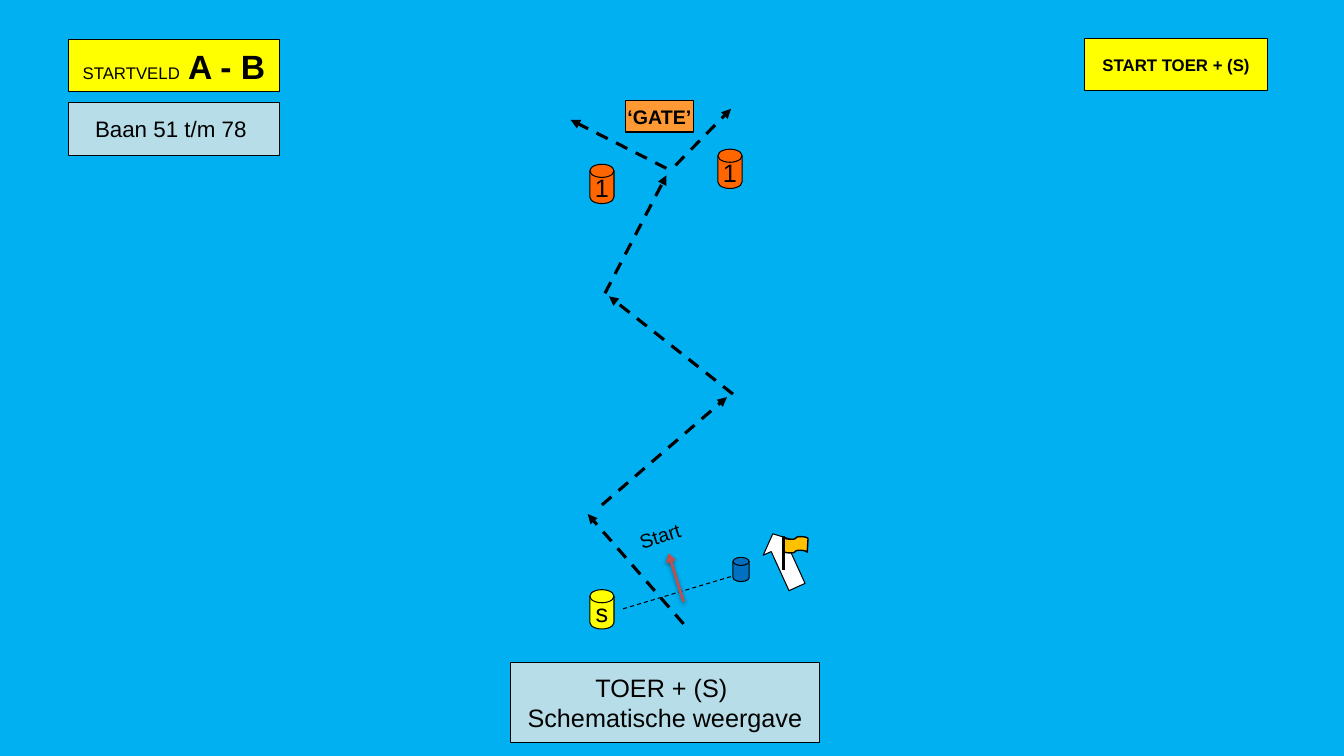
from dataclasses import dataclass
from itertools import chain

from lxml import etree
from pptx import Presentation
from pptx import util as u
from pptx.dml.color import RGBColor
from pptx.enum import dml, shapes, text
from pptx.oxml import parse_xml
from pptx.oxml.ns import nsdecls, qn
from pptx.shapes.base import BaseShape
from pptx.shapes.connector import Connector
from pptx.slide import Slide

EMU_PER_PX = 9144  # 100 px to the inch
FONT = "Arial"
BLACK, WHITE, YELLOW = "000000", "FFFFFF", "FFFF00"
ORANGE, PALE_BLUE = "FF6600", "B7DEE8"
KIND = shapes.MSO_SHAPE
BUOY = KIND.FLOWCHART_MAGNETIC_DISK


@dataclass(frozen=True)
class Leg:
    start: tuple[int, int]
    end: tuple[int, int]
    width: float = 2.25
    color: str = BLACK
    dashed: bool = True
    head: str = "triangle"
    shadow: bool = False


@dataclass(frozen=True)
class Span:
    text: str
    size: int
    bold: bool = False


@dataclass(frozen=True)
class Item:
    """A filled shape; each entry of lines is one paragraph of spans."""
    kind: shapes.MSO_SHAPE
    frame: tuple[int, int, int, int]
    fill: str
    lines: tuple[tuple[Span, ...], ...] = ()
    rotation: float = 0
    outline: float = 0.75


LEGS = (
    Leg((678, 619), (583, 510)),
    Leg((597, 501), (721, 394)),
    Leg((727, 391), (604, 294)),
    Leg((600, 291), (661, 174)),
    Leg((661, 167), (566, 119)),
    Leg((670, 164), (725, 108)),
    Leg((618, 604), (735, 569), width=0.75, head=""),
    Leg((678, 597), (663, 549), width=2, color="C0504D", dashed=False,
        head="arrow", shadow=True),
)
FLAG_POLE = Leg((777, 532), (777, 565), dashed=False, head="")

ITEMS = (
    Item(KIND.RECTANGLE, (1076, 38, 181, 52), YELLOW,
         ((Span("START TOER + (S)", 12, True),),)),
    Item(KIND.RECTANGLE, (68, 39, 209, 52), YELLOW,
         ((Span("STARTVELD", 12), Span(" A - B", 24, True)),)),
    Item(KIND.RECTANGLE, (68, 102, 209, 52), PALE_BLUE,
         ((Span("Baan 51 t/m 78 ", 16),),)),
    Item(KIND.RECTANGLE, (506, 657, 307, 80), PALE_BLUE,
         ((Span("TOER + (S) ", 18),), (Span("Schematische weergave", 18),))),
    Item(KIND.RECTANGLE, (620, 100, 68, 31), "FF9933",
         ((Span("‘GATE’", 14, True),),)),
    Item(BUOY, (585, 163, 24, 39), ORANGE, ((Span("1", 18),),)),
    Item(BUOY, (712, 148, 24, 39), ORANGE, ((Span("1", 18),),)),
    Item(BUOY, (585, 585, 24, 39), YELLOW, ((Span("s", 18),),)),
    Item(BUOY, (727, 553, 16, 24), "0070C0"),
)
WIND_ARROW = Item(KIND.UP_ARROW, (761, 527, 35, 58), WHITE, rotation=335.5)
FLAG = Item(KIND.FLOWCHART_PUNCHED_TAPE, (777, 532, 24, 17), "FFC000",
            rotation=3.5, outline=1)


def px(length: int) -> u.Emu:
    return u.Emu(length * EMU_PER_PX)


def rgb(color: str) -> RGBColor:
    return RGBColor.from_string(color)


def set_effects(line: Connector, shadow: bool) -> None:
    """Replace the theme shadow by a soft drop shadow or by none."""
    drop = (
        '<a:outerShdw blurRad="39370" dist="20320" dir="5400000" rotWithShape="0">'
        f'<a:srgbClr val="{BLACK}"><a:alpha val="38000"/></a:srgbClr></a:outerShdw>'
    ) if shadow else ""
    effects = f'<a:effectLst {nsdecls("a")}>{drop}</a:effectLst>'
    line._element.spPr.append(parse_xml(effects))


def draw_leg(page: Slide, leg: Leg) -> None:
    line = page.shapes.add_connector(
        shapes.MSO_CONNECTOR.STRAIGHT, *map(px, chain(leg.start, leg.end)))
    line.line.color.rgb = rgb(leg.color)
    line.line.width = u.Pt(leg.width)
    if leg.dashed:
        line.line.dash_style = dml.MSO_LINE.DASH
    if leg.head:
        etree.SubElement(line.line._get_or_add_ln(), qn("a:tailEnd"), type=leg.head)
    set_effects(line, leg.shadow)


def write(shape: BaseShape, lines: tuple[tuple[Span, ...], ...]) -> None:
    frame = shape.text_frame
    frame.word_wrap = False
    frame.vertical_anchor = text.MSO_ANCHOR.MIDDLE
    frame.margin_left = frame.margin_right = 0
    frame.margin_top = frame.margin_bottom = 0
    for index, spans in enumerate(lines):
        para = frame.add_paragraph() if index else frame.paragraphs[0]
        para.alignment = text.PP_ALIGN.CENTER
        para.font.name = FONT
        para.font.color.rgb = rgb(BLACK)
        for span in spans:
            run = para.add_run()
            run.text = span.text
            run.font.size = u.Pt(span.size)
            run.font.bold = span.bold


def draw_item(page: Slide, item: Item) -> BaseShape:
    shape = page.shapes.add_shape(item.kind, *map(px, item.frame))
    shape.rotation = item.rotation
    shape.shadow.inherit = False
    shape.fill.solid()
    shape.fill.fore_color.rgb = rgb(item.fill)
    shape.line.color.rgb = rgb(BLACK)
    shape.line.width = u.Pt(item.outline)
    if item.lines:
        write(shape, item.lines)
    return shape


def main() -> None:
    deck = Presentation()
    deck.slide_width, deck.slide_height = px(1333), px(750)
    page = deck.slides.add_slide(deck.slide_layouts[6])
    page.background.fill.solid()
    page.background.fill.fore_color.rgb = rgb("00B0F0")

    for leg in LEGS:
        draw_leg(page, leg)
    start_label = page.shapes.add_textbox(*map(px, (623, 519, 63, 24)))
    start_label.rotation = 342.2
    write(start_label, ((Span("Start", 14),),))
    for item in ITEMS:
        draw_item(page, item)
    wind_arrow = draw_item(page, WIND_ARROW)
    wind_arrow.adjustments[0] = 0.5
    wind_arrow.adjustments[1] = 0.44
    draw_item(page, FLAG)
    draw_leg(page, FLAG_POLE)

    deck.save("out.pptx")


if __name__ == "__main__":
    main()
